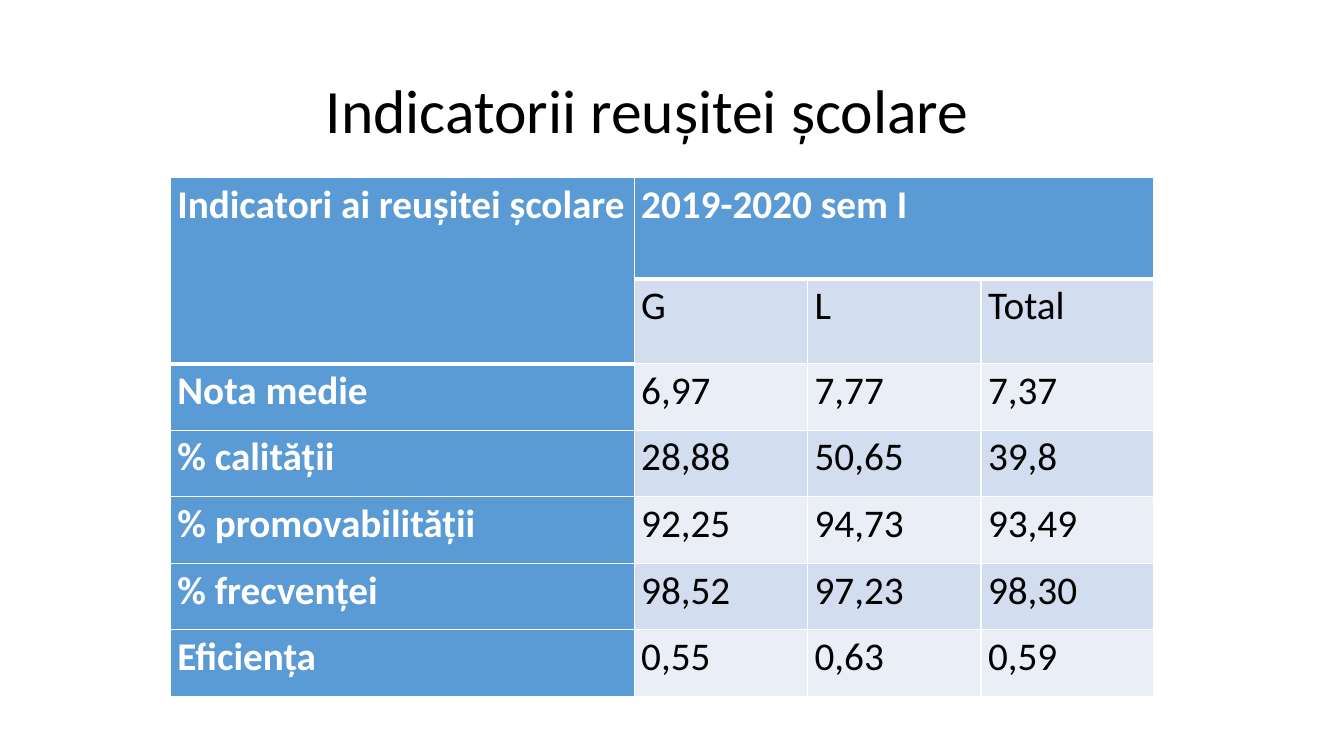
import pptx
import pptx.dml.color
import pptx.enum.text
import pptx.oxml
import pptx.oxml.ns
import pptx.util
from pptx.util import Inches

HEADER_BLUE = "5B9BD5"
BAND_FILLS = ("EAEFF7", "D2DEEF")
WHITE = "FFFFFF"
BLACK = "000000"

COLUMN_WIDTHS = (4.6, 1.72, 1.72, 1.71)
ROW_HEIGHTS = (1.01, 0.84) + (0.66,) * 5
INDICATOR_ROWS = (
    ("Indicatori ai reușitei școlare", "2019-2020 sem I", "", ""),
    ("", "G", "L", "Total"),
    ("Nota medie", "6,97", "7,77", "7,37"),
    ("% calității", "28,88", "50,65", "39,8"),
    ("% promovabilității", "92,25", "94,73", "93,49"),
    ("% frecvenței", "98,52", "97,23", "98,30"),
    ("Eficiența", "0,55", "0,63", "0,59"),
)


def color(hex_string):
    return pptx.dml.color.RGBColor.from_string(hex_string)


def write_text(text_frame, text, size, hex_color, bold=False, align=None, line_spacing=1.0):
    paragraph = text_frame.paragraphs[0]
    paragraph.alignment = align
    paragraph.line_spacing = line_spacing
    run = paragraph.add_run()
    run.text = text
    run.font.name = "Calibri"
    run.font.size = pptx.util.Pt(size)
    run.font.bold = bold
    run.font.color.rgb = color(hex_color)


def set_borders(cell, bottom_points):
    """Draw white lines round a cell; they must precede its fill in the XML."""
    properties = cell._tc.get_or_add_tcPr()
    namespace = pptx.oxml.ns.nsdecls("a")
    for side, points in (("L", 1), ("R", 1), ("T", 1), ("B", bottom_points)):
        properties.append(pptx.oxml.parse_xml(
            f'<a:ln{side} {namespace} w="{pptx.util.Pt(points)}"><a:solidFill>'
            f'<a:srgbClr val="{WHITE}"/></a:solidFill></a:ln{side}>'))


def format_cell(cell, text, fill, bottom_points, **text_format):
    set_borders(cell, bottom_points)
    cell.fill.solid()
    cell.fill.fore_color.rgb = color(fill)
    cell.margin_left = cell.margin_right = Inches(0.07)
    cell.margin_top = cell.margin_bottom = 0
    if text:
        write_text(cell.text_frame, text, 28, line_spacing=1.07,
                   align=pptx.enum.text.PP_ALIGN.JUSTIFY, **text_format)


def add_title(slide, text):
    box = slide.shapes.add_textbox(Inches(0.92), Inches(0.4), Inches(11.5), Inches(1.45))
    text_frame = box.text_frame
    text_frame.word_wrap = True
    text_frame.vertical_anchor = pptx.enum.text.MSO_ANCHOR.MIDDLE
    text_frame.margin_left = Inches(2.31)
    write_text(text_frame, text, 44, BLACK, line_spacing=0.9)


def add_indicator_table(slide):
    table = slide.shapes.add_table(
        len(ROW_HEIGHTS), len(COLUMN_WIDTHS), Inches(1.69), Inches(1.76),
        Inches(sum(COLUMN_WIDTHS)), Inches(sum(ROW_HEIGHTS))).table
    for column, width in zip(table.columns, COLUMN_WIDTHS):
        column.width = Inches(width)
    for row, height in zip(table.rows, ROW_HEIGHTS):
        row.height = Inches(height)
    table.cell(0, 0).merge(table.cell(1, 0))
    table.cell(0, 1).merge(table.cell(0, 3))
    for row_index, texts in enumerate(INDICATOR_ROWS):
        for column_index, text in enumerate(texts):
            is_header = row_index == 0 or column_index == 0
            above_thick_line = row_index == 0 or (row_index, column_index) == (1, 0)
            format_cell(table.cell(row_index, column_index), text,
                        HEADER_BLUE if is_header else BAND_FILLS[row_index % 2],
                        3 if above_thick_line else 1,
                        hex_color=WHITE if is_header else BLACK, bold=is_header)


def main():
    presentation = pptx.Presentation()
    presentation.slide_width = Inches(13.33)
    presentation.slide_height = Inches(7.5)
    slide = presentation.slides.add_slide(presentation.slide_layouts[6])
    add_title(slide, "Indicatorii reușitei școlare")
    add_indicator_table(slide)
    presentation.save("out.pptx")


if __name__ == "__main__":
    main()
